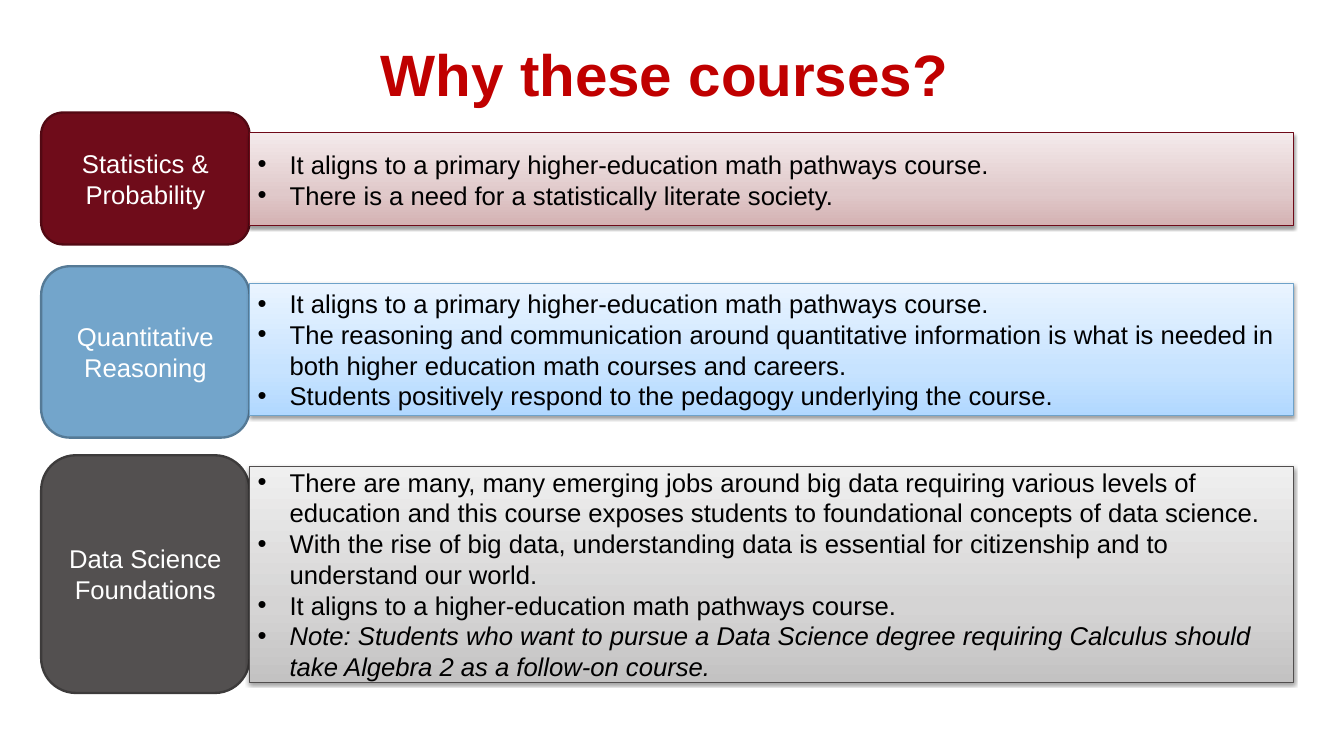
"""Build the slide on why these courses are offered."""
from copy import deepcopy

from lxml.etree import SubElement as Sub
from pptx import Presentation
from pptx.dml.color import RGBColor as Rgb
from pptx.enum.shapes import MSO_SHAPE as Shape
from pptx.enum.text import MSO_ANCHOR as Anchor, MSO_AUTO_SIZE as Auto, PP_ALIGN as Align
from pptx.oxml.ns import qn
from pptx.util import Inches, Pt

COLS, ROWS = 32, 18
LEFT, WIDE = 0.98, 4.96
BAR_X, BAR_W = LEFT + WIDE, 24.86
INDENT = Inches(0.38)

HUES = {
    "title": "C00000", "label": "FFFFFF", "text": "000000", "shade": "000000",
    "red": "6F0C1A", "red_rim": "520913", "red_edge": "6F0918",
    "red_low": "D4B1B2", "red_mid": "E0C9CA", "red_top": "F4EAEB",
    "blue": "73A5CB", "blue_rim": "557A96", "blue_edge": "6EA2C9",
    "blue_low": "B1D8FF", "blue_mid": "C7E3FF", "blue_top": "EAF4FF",
    "gray": "535050", "gray_rim": "3D3B3B", "gray_edge": "514E4E",
    "gray_low": "C3C2C2", "gray_mid": "D5D4D4", "gray_top": "EFEFEF",
}

COURSES = [
    ("red", "Statistics & Probability", (2.68, 3.14), (3.16, 2.22), [
        "It aligns to a primary higher-education math pathways course.",
        "There is a need for a statistically literate society.",
    ], None),
    ("blue", "Quantitative Reasoning", (6.34, 4.08), (6.74, 3.16), [
        "It aligns to a primary higher-education math pathways course.",
        "The reasoning and communication around quantitative information is "
        "what is needed in both higher education math courses and careers.",
        "Students positively respond to the pedagogy underlying the course.",
    ], None),
    ("gray", "Data Science Foundations", (10.84, 5.66), (11.1, 5.14), [
        "There are many, many emerging jobs around big data requiring various "
        "levels of education and this course exposes students to foundational "
        "concepts of data science.",
        "With the rise of big data, understanding data is essential for "
        "citizenship and to understand our world.",
        "It aligns to a higher-education math pathways course.",
    ], "Note: Students who want to pursue a Data Science degree requiring "
       "Calculus should take Algebra 2 as a follow-on course."),
]


def tint(name):
    return Rgb.from_string(HUES[name])


def write(para, text, hue="text", size=22, bold=False, slant=False,
          align=Align.LEFT, dot=False):
    if dot:
        props = para._p.get_or_add_pPr()
        props.set("marL", str(INDENT))
        props.set("indent", str(-INDENT))
        Sub(props, qn("a:buFont"), typeface="Arial")
        Sub(props, qn("a:buChar"), char="•")
    para.alignment = align
    run = para.add_run()
    run.text = text
    font = run.font
    font.name, font.size = "Arial", Pt(size)
    font.bold, font.italic = bold, slant
    font.color.rgb = tint(hue)


class Deck:
    def __init__(self):
        self.prs = Presentation()
        self.prs.slide_width, self.prs.slide_height = Inches(16), Inches(9)
        self.slide = self.prs.slides.add_slide(self.prs.slide_layouts[5])

    def area(self, x, y, wide, high):
        col = self.prs.slide_width / COLS
        row = self.prs.slide_height / ROWS
        return [round(n) for n in (x * col, y * row, wide * col, high * row)]

    def title(self, text, *area):
        box = self.slide.shapes.title
        box.left, box.top, box.width, box.height = self.area(*area)
        frame = box.text_frame
        frame.margin_left = frame.margin_right = 0
        frame.margin_top = frame.margin_bottom = 0
        frame.word_wrap = True
        frame.auto_size = Auto.SHAPE_TO_FIT_TEXT
        frame.vertical_anchor = Anchor.TOP
        write(frame.paragraphs[0], text, "title", 50, bold=True, align=Align.CENTER)

    def block(self, kind, area, rim, weight):
        shape = self.slide.shapes.add_shape(kind, *self.area(*area))
        shape.shadow.inherit = False
        shape.line.color.rgb = tint(rim)
        shape.line.width = Pt(weight)
        shape.text_frame.word_wrap = True
        shape.text_frame.vertical_anchor = Anchor.MIDDLE
        return shape

    def card(self, hue, text, top, high):
        shape = self.block(Shape.ROUNDED_RECTANGLE, (LEFT, top, WIDE, high),
                           hue + "_rim", 2)
        shape.fill.solid()
        shape.fill.fore_color.rgb = tint(hue)
        write(shape.text_frame.paragraphs[0], text, "label", align=Align.CENTER)

    def bar(self, hue, points, note, top, high):
        shape = self.block(Shape.RECTANGLE, (BAR_X, top, BAR_W, high),
                           hue + "_edge", 0.75)
        self.fade(shape, hue)
        self.shade(shape)
        frame = shape.text_frame
        lines = [(text, False) for text in points]
        if note:
            lines.append((note, True))
        for num, (text, slant) in enumerate(lines):
            para = frame.add_paragraph() if num else frame.paragraphs[0]
            write(para, text, slant=slant, dot=True)

    def fade(self, shape, hue):
        fill = shape.fill
        fill.gradient()
        fill.gradient_angle = 90
        stops = shape._element.spPr.find(qn("a:gradFill")).find(qn("a:gsLst"))
        stops.insert(1, deepcopy(stops[0]))
        marks = ("_low", 0), ("_mid", 0.35), ("_top", 1)
        for stop, (tone, spot) in zip(fill.gradient_stops, marks):
            stop.color.rgb = tint(hue + tone)
            stop.position = spot

    def shade(self, shape):
        list_ = shape._element.spPr.find(qn("a:effectLst"))
        drop = Sub(list_, qn("a:outerShdw"), blurRad=str(Pt(3.1)),
                   dist=str(Pt(1.6)), dir="5400000", rotWithShape="0")
        color = Sub(drop, qn("a:srgbClr"), val=HUES["shade"])
        Sub(color, qn("a:alpha"), val="38000")


def main():
    deck = Deck()
    deck.title("Why these courses? ", 5.22, 0.9, 21.6, 1.7)
    for hue, name, card, _, _, _ in COURSES:
        deck.card(hue, name, *card)
    for hue, _, _, bar, points, note in COURSES:
        deck.bar(hue, points, note, *bar)
    deck.prs.save("out.pptx")


if __name__ == "__main__":
    main()
